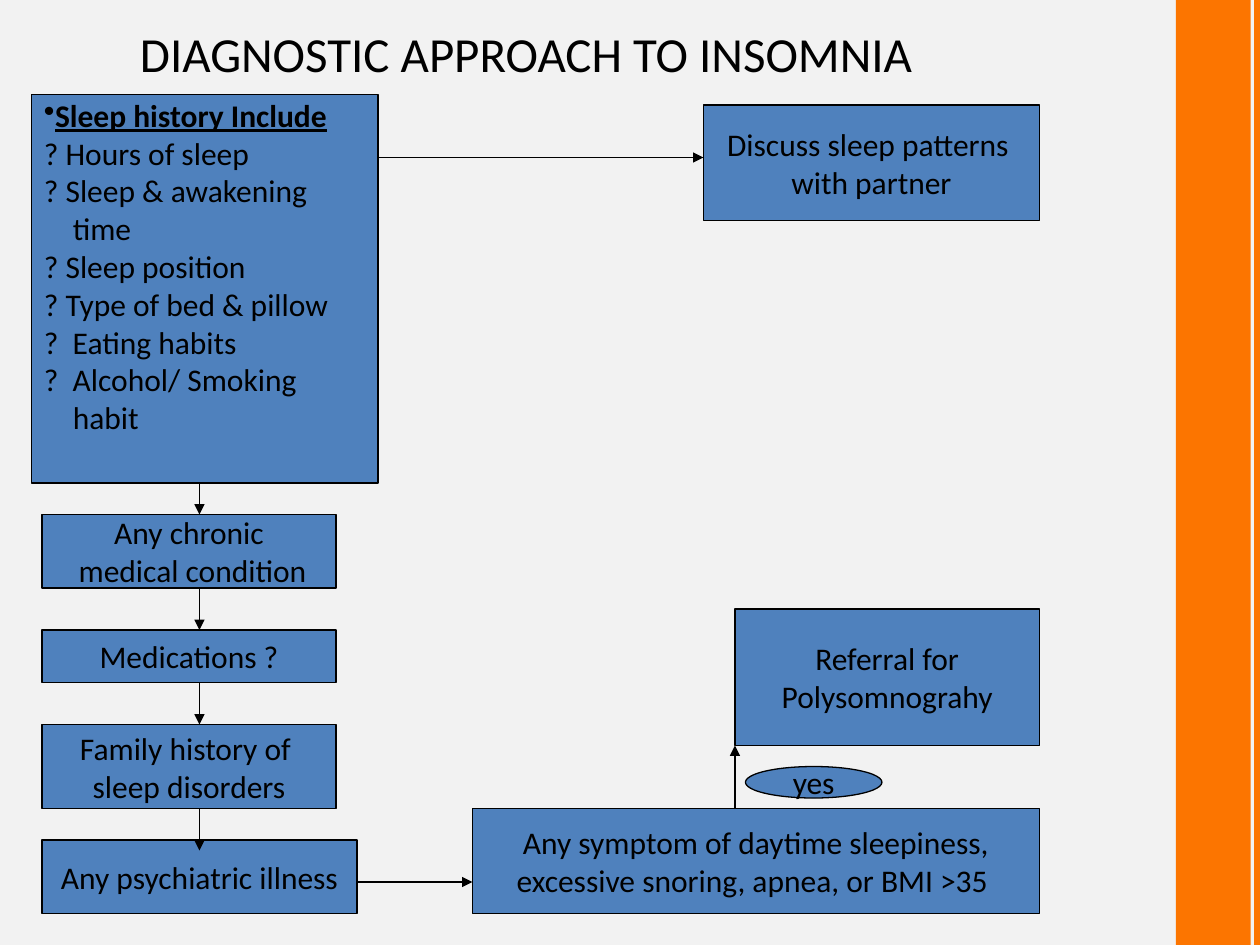
from lxml import etree
from pptx import Presentation
from pptx import util as u
from pptx.dml.color import RGBColor
from pptx.enum import shapes, text
from pptx.oxml import ns

PX = 9525
FONT = "Calibri"
COLORS = {"back": "F2F2F2", "band": "FC7500", "box": "4F81BD", "ink": "000000"}
HISTORY = ["Sleep history Include", "? Hours of sleep", "? Sleep & awakening", "time",
           "? Sleep position", "? Type of bed & pillow", "?  Eating habits",
           "?  Alcohol/ Smoking", "habit"]
BOXES = [
    (32, 392, 224, 56, "Any chronic\n medical condition"),
    (536, 80, 256, 88, "Discuss sleep patterns \nwith partner"),
    (32, 480, 224, 40, "Medications ?"),
    (32, 552, 224, 64, "Family history of \nsleep disorders"),
    (32, 640, 240, 56, "Any psychiatric illness"),
    (360, 616, 432, 80, "Any symptom of daytime sleepiness,\nexcessive snoring, apnea, or BMI >35 "),
    (560, 464, 232, 104, "Referral for\nPolysomnograhy"),
]
STEPS = [(368, 392), (448, 480), (520, 552), (616, 648)]
LINKS = [(288, 120, 536, 120), (272, 672, 360, 672), (560, 616, 560, 568)]


class Deck:
    """Holds the presentation, its current slide and the shared style."""

    def __init__(self, width, height):
        self.prs = Presentation()
        self.prs.slide_width, self.prs.slide_height = width * PX, height * PX
        self.s = self.prs.slides.add_slide(self.prs.slide_layouts[5])
        self.paint(self.s.background.fill, "back")

    def paint(self, fill, color):
        fill.solid()
        fill.fore_color.rgb = RGBColor.from_string(COLORS[color])

    def label(self, tf, content, size=18, align=text.PP_ALIGN.CENTER):
        tf.text = content
        for p in tf.paragraphs:
            p.alignment = align
            for r in p.runs:
                r.font.name, r.font.size = FONT, u.Pt(size)
                r.font.color.rgb = RGBColor.from_string(COLORS["ink"])

    def title(self, x, y, w, h, content, inset):
        sp = self.s.shapes.title
        sp.left, sp.top, sp.width, sp.height = (v * PX for v in (x, y, w, h))
        tf = sp.text_frame
        tf.vertical_anchor, tf.margin_left = text.MSO_ANCHOR.MIDDLE, inset * PX
        self.label(tf, content, 28)

    def shape(self, x, y, w, h, fill="box", kind=shapes.MSO_SHAPE.RECTANGLE):
        sp = self.s.shapes.add_shape(kind, *(v * PX for v in (x, y, w, h)))
        sp.shadow.inherit = False
        self.paint(sp.fill, fill)
        sp.line.fill.background()
        return sp

    def box(self, x, y, w, h, content, kind=shapes.MSO_SHAPE.RECTANGLE):
        sp = self.shape(x, y, w, h, kind=kind)
        self.paint(sp.line.fill, "ink")
        sp.line.width = u.Pt(0.75)
        tf = sp.text_frame
        tf.word_wrap, tf.vertical_anchor = False, text.MSO_ANCHOR.MIDDLE
        self.label(tf, content)
        return tf

    def checklist(self, x, y, w, h, items, indent):
        tf = self.box(x, y, w, h, "\n".join(items))
        tf.vertical_anchor, tf.margin_top = text.MSO_ANCHOR.TOP, PX
        for p in tf.paragraphs:
            p.alignment = text.PP_ALIGN.LEFT
            if not p.text.startswith("?"):
                p._p.get_or_add_pPr().set("marL", str(indent * PX))
        head = tf.paragraphs[0]
        pPr = head._p.get_or_add_pPr()
        pPr.set("marL", "0")
        etree.SubElement(pPr, ns.qn("a:buChar"), char="•")
        head.runs[0].font.bold = head.runs[0].font.underline = True

    def line(self, x1, y1, x2, y2, color="ink", width=0.75, arrow=True):
        c = self.s.shapes.add_connector(shapes.MSO_CONNECTOR.STRAIGHT,
                                        *(v * PX for v in (x1, y1, x2, y2)))
        self.paint(c.line.fill, color)
        c.line.width = u.Pt(width)
        if arrow:
            etree.SubElement(c.line._get_or_add_ln(), ns.qn("a:tailEnd"), type="triangle")
        etree.SubElement(c._element.spPr, ns.qn("a:effectLst"))


def main():
    deck = Deck(960, 720)
    deck.shape(896, 0, 57, 720, "band")
    deck.line(958, 0, 958, 720, "band", 4, arrow=False)
    deck.title(0, 0, 785, 80, "DIAGNOSTIC APPROACH TO INSOMNIA", 26)
    deck.checklist(24, 72, 264, 296, HISTORY, 22)
    for box in BOXES:
        deck.box(*box)
    deck.box(568, 584, 104, 24, "yes", shapes.MSO_SHAPE.OVAL)
    for top, bottom in STEPS:
        deck.line(152, top, 152, bottom)
    for link in LINKS:
        deck.line(*link)
    deck.prs.save("out.pptx")


if __name__ == "__main__":
    main()
